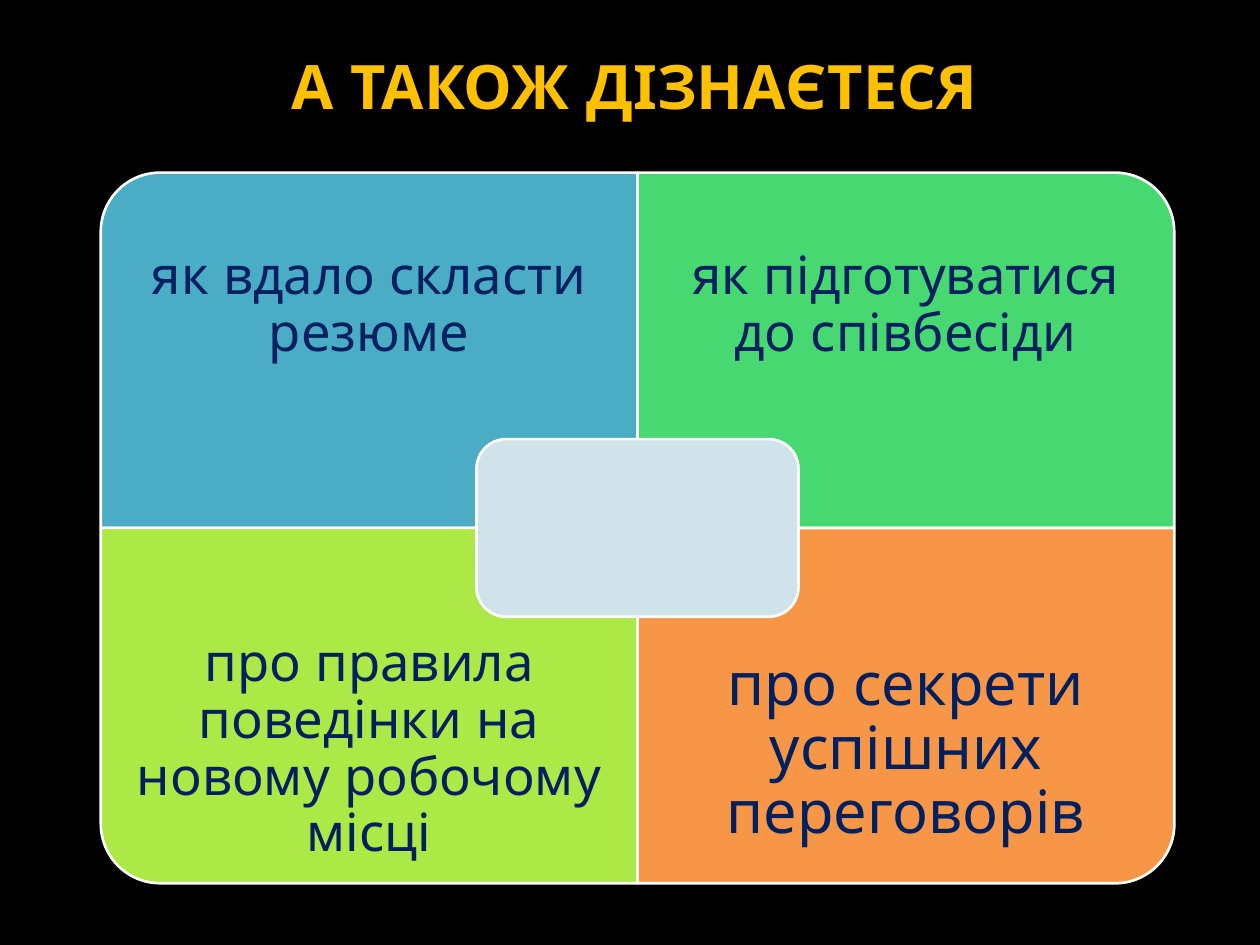
from pptx import Presentation
from pptx.dml.color import RGBColor
from pptx.enum import shapes, text
from pptx.util import Inches, Pt

FONT = "Quicksand"
COLORS = {
    "background": "000000",
    "title": "FFC000",
    "text": "002060",
    "outline": "FFFFFF",
    "resume": "4BACC6",
    "interview": "47D872",
    "conduct": "ACE946",
    "negotiation": "F79646",
    "center": "D0E3EA",
}

# Column, row, rotation, colour, wording, text size, text inset
QUADRANTS = [
    (0, 0, 270, "resume", "як вдало скласти резюме", 30, 0.23),
    (1, 0, 0, "interview", "як підготуватися до співбесіди", 30, 0.23),
    (0, 1, 180, "conduct", "про правила поведінки на новому робочому місці", 30, 0.23),
    (1, 1, 90, "negotiation", "про секрети успішних переговорів", 34, 0.26),
]


def color(name):
    return RGBColor.from_string(COLORS[name])


def style_paragraph(paragraph, size, color_name, bold=False):
    paragraph.alignment = text.PP_ALIGN.CENTER
    paragraph.font.name = FONT
    paragraph.font.size = Pt(size)
    paragraph.font.bold = bold
    paragraph.font.color.rgb = color(color_name)


def add_panel(slide, kind, left, top, width, height, fill):
    shape = slide.shapes.add_shape(
        kind, Inches(left), Inches(top), Inches(width), Inches(height))
    shape.shadow.inherit = False
    shape.fill.solid()
    shape.fill.fore_color.rgb = color(fill)
    shape.line.color.rgb = color("outline")
    shape.line.width = Pt(1.5)
    return shape


def add_label(slide, left, top, width, height, wording, size, inset):
    box = slide.shapes.add_textbox(
        Inches(left), Inches(top), Inches(width), Inches(height))
    frame = box.text_frame
    frame.word_wrap = True
    frame.vertical_anchor = text.MSO_ANCHOR.MIDDLE
    frame.margin_left = frame.margin_right = Inches(inset)
    frame.margin_top = frame.margin_bottom = Inches(inset)
    frame.text = wording
    paragraph = frame.paragraphs[0]
    paragraph.line_spacing = 0.9
    style_paragraph(paragraph, size, "text")


def place_title(slide, left, top, width, height):
    title = slide.shapes.title
    title.left, title.top = Inches(left), Inches(top)
    title.width, title.height = Inches(width), Inches(height)
    frame = title.text_frame
    frame.vertical_anchor = text.MSO_ANCHOR.MIDDLE
    frame.text = "А ТАКОЖ ДІЗНАЄТЕСЯ"
    style_paragraph(frame.paragraphs[0], 35, "title", bold=True)


def add_matrix(slide, left, top, width, height):
    cell_width, cell_height = width / 2, height / 2
    label_height = cell_height * 0.75

    # Quadrants, each turned so that its round corner points outwards
    for column, row, rotation, fill, wording, size, inset in QUADRANTS:
        x, y = left + column * cell_width, top + row * cell_height
        panel_width, panel_height = cell_width, cell_height
        if rotation % 180:
            panel_width, panel_height = cell_height, cell_width
        panel = add_panel(
            slide, shapes.MSO_SHAPE.ROUND_1_RECTANGLE,
            x + (cell_width - panel_width) / 2,
            y + (cell_height - panel_height) / 2,
            panel_width, panel_height, fill)
        panel.rotation = rotation
        # Labels keep to the outer three quarters of the cell
        label_top = y + row * (cell_height - label_height)
        add_label(slide, x, label_top, cell_width, label_height,
                  wording, size, inset)

    # Central plate
    plate_width, plate_height = cell_width * 0.6, cell_height / 2
    add_panel(slide, shapes.MSO_SHAPE.ROUNDED_RECTANGLE,
              left + (width - plate_width) / 2,
              top + (height - plate_height) / 2,
              plate_width, plate_height, "center")


def main():
    presentation = Presentation()
    presentation.slide_width = Inches(10)
    presentation.slide_height = Inches(7.5)
    slide = presentation.slides.add_slide(presentation.slide_layouts[5])
    slide.background.fill.solid()
    slide.background.fill.fore_color.rgb = color("background")
    place_title(slide, 0.93, 0.24, 8.21, 0.87)
    add_matrix(slide, 0.8, 1.37, 8.52, 5.64)
    presentation.save("out.pptx")


if __name__ == "__main__":
    main()
